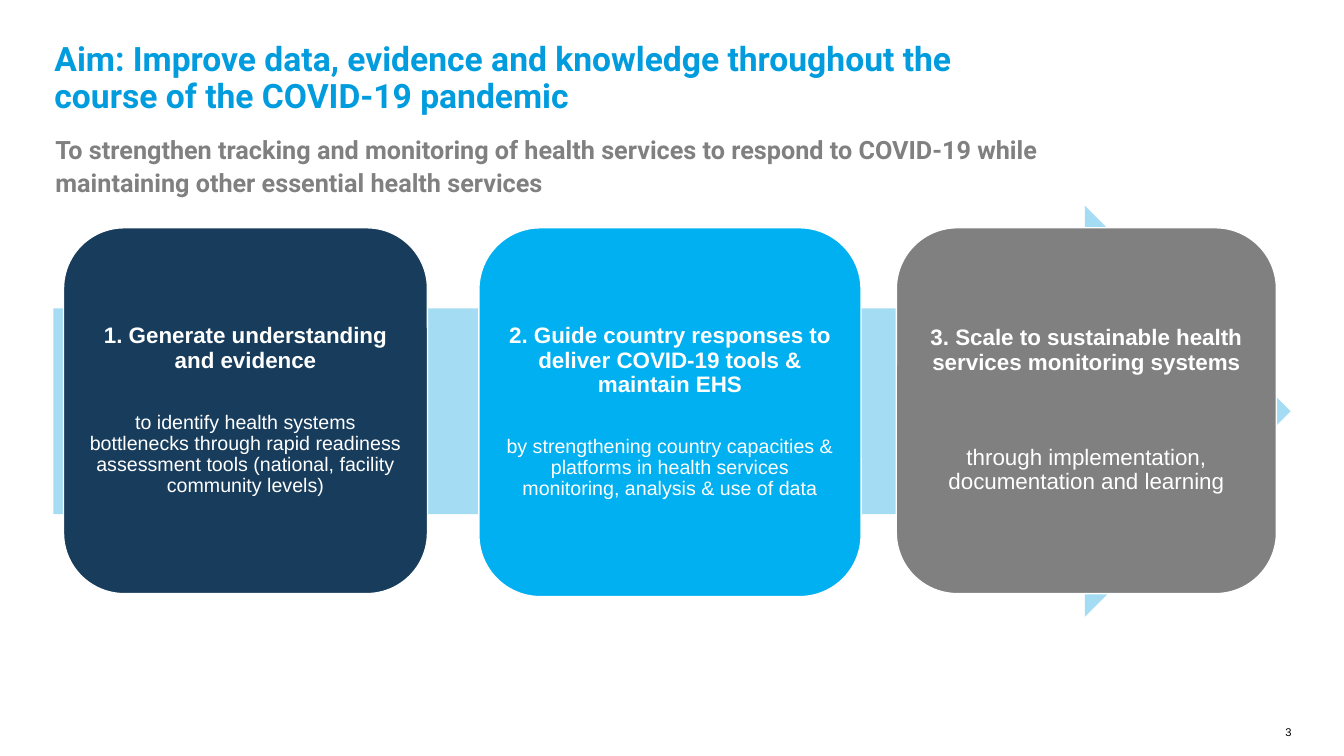
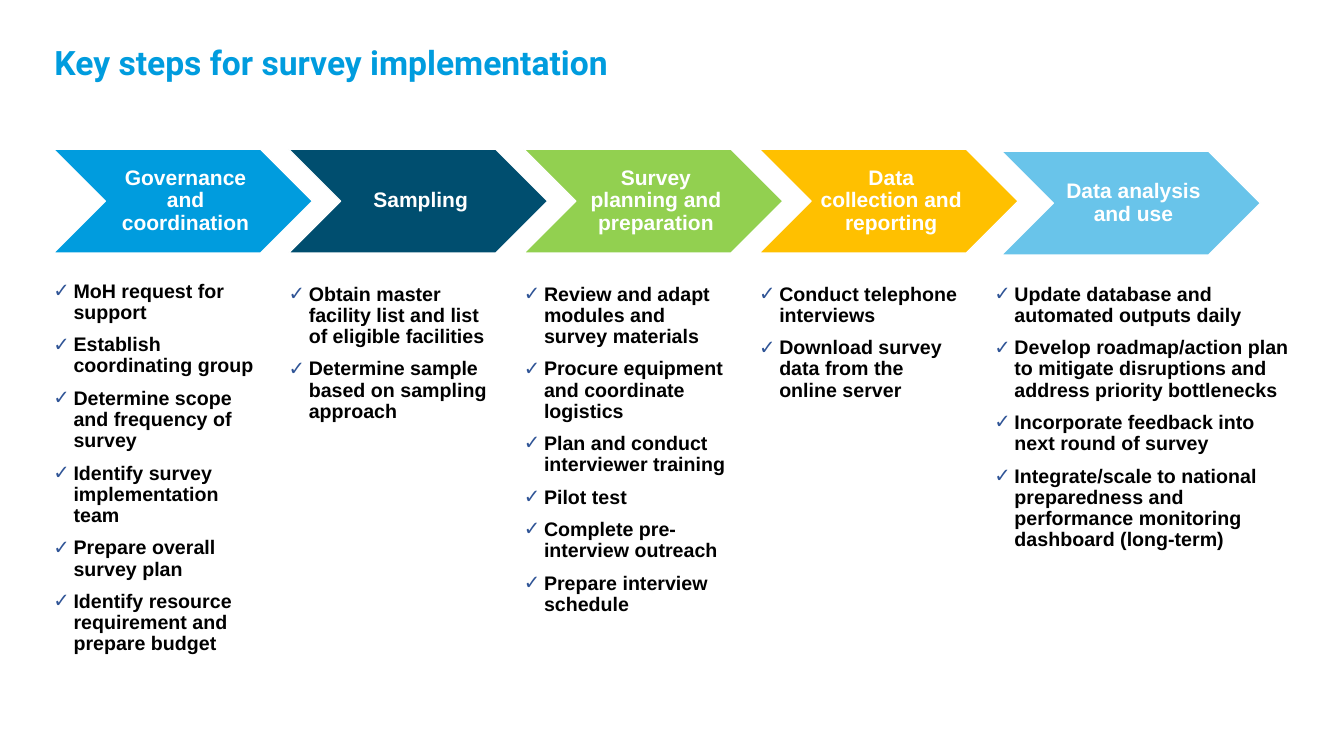
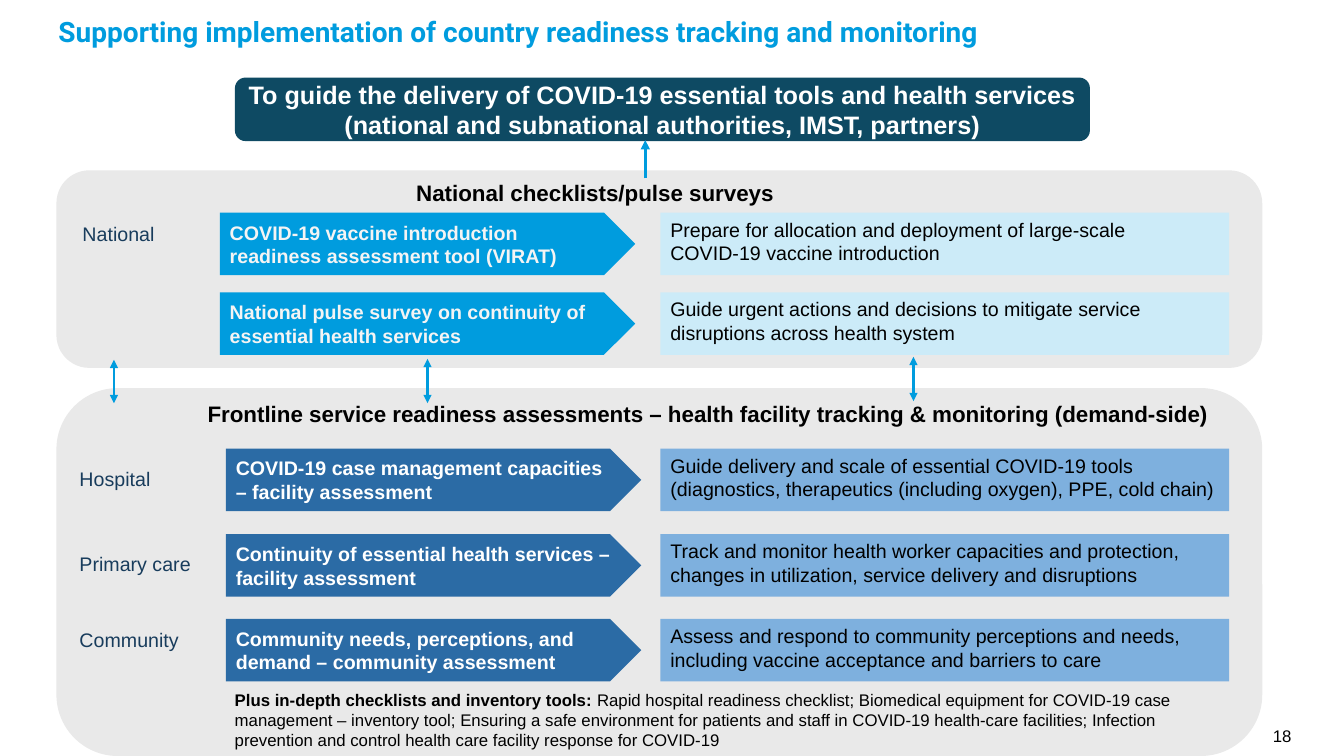
from lxml import etree
from pptx import Presentation
from pptx.dml.color import RGBColor
from pptx.enum.shapes import MSO_CONNECTOR, MSO_SHAPE
from pptx.enum.text import MSO_ANCHOR, MSO_AUTO_SIZE, PP_ALIGN
from pptx.oxml.ns import qn
from pptx.util import Inches, Pt

BLUE, NAVY, WHITE, BLACK, GREY = "009CDE", "183C5C", "FFFFFF", "000000", "808080"
PANEL_GREY = "E9E9E9"
HEADING_FONT, BODY_FONT = "Roboto", "Arial"
DEFAULT_INSETS = (0.1, 0.05, 0.1, 0.05)
TITLE_INSETS = (0.02, 0, 0.39, 0)
NO_INSETS = (0, 0, 0, 0)

# Slide 1: heading, body, body size, gap between them, fill, left, width, height
AIM_TITLE = "Aim: Improve data, evidence and knowledge throughout the course of the COVID-19 pandemic"
AIM_SUBTITLE = ("To strengthen tracking and monitoring of health services to respond to COVID-19 "
                "while maintaining other essential health services")
AIM_CARDS = [
    ("1. Generate understanding and evidence",
     "to identify health systems bottlenecks through rapid readiness assessment tools "
     "(national, facility community levels)", 14, 28, NAVY, 0.63, 3.61, 3.63),
    ("2. Guide country responses to deliver COVID-19 tools & maintain EHS",
     "by strengthening country capacities & platforms in health services monitoring, "
     "analysis & use of data", 14, 28, "00B0F0", 4.75, 3.79, 3.66),
    ("3. Scale to sustainable health services monitoring systems",
     "through implementation, documentation and learning", 16, 51, GREY, 8.89, 3.77, 3.63),
]

# Slide 2: step, fill, tasks
STEPS_TITLE = "Key steps for survey implementation"
STEPS = [
    ("Governance and coordination", BLUE, [
        "MoH request for support", "Establish coordinating group",
        "Determine scope and frequency of survey", "Identify survey implementation team",
        "Prepare overall survey plan", "Identify resource requirement and prepare budget"]),
    ("Sampling", "004E6F", [
        "Obtain master facility list and list of eligible facilities",
        "Determine sample based on sampling approach"]),
    ("Survey planning and preparation", "92D050", [
        "Review and adapt modules and survey materials",
        "Procure equipment and coordinate logistics", "Plan and conduct interviewer training",
        "Pilot test", "Complete pre-interview outreach", "Prepare interview schedule"]),
    ("Data collection and reporting", "FFC000", [
        "Conduct telephone interviews", "Download survey data from the online server"]),
    ("Data analysis and use", "69C4EA", [
        "Update database and automated outputs daily",
        "Develop roadmap/action plan to mitigate disruptions and address priority bottlenecks",
        "Incorporate feedback into next round of survey",
        "Integrate/scale to national preparedness and performance monitoring dashboard (long-term)"]),
]

# Slide 3: panels with rows of (top, tool, purpose); labels; arrows
SUPPORT_TITLE = "Supporting implementation of country readiness tracking and monitoring"
SUPPORT_GOAL = ("To guide the delivery of COVID-19 essential tools and health services\v"
                "(national and subnational authorities, IMST, partners)")
PANELS = [
    {"box": (0.56, 1.69, 11.96, 1.96), "heading": "National checklists/pulse surveys",
     "heading_box": (4.03, 1.73, 8.2, 0.4), "tool_left": 2.18,
     "tool_fill": BLUE, "tool_text": "F4F4F4", "purpose_fill": "CCEBF8",
     "rows": [
         (2.11, "COVID-19 vaccine introduction readiness assessment tool (VIRAT)",
          "Prepare for allocation and deployment of large-scale COVID-19 vaccine introduction"),
         (2.9, "National pulse survey on continuity of essential health services",
          "Guide urgent actions and decisions to mitigate service disruptions across health system")]},
    {"box": (0.56, 3.85, 11.96, 3.65),
     "heading": "Frontline service readiness assessments – health facility tracking & monitoring (demand-side)",
     "heading_box": (1.96, 3.92, 10.31, 0.4), "tool_left": 2.24,
     "tool_fill": "2B6BA5", "tool_text": WHITE, "purpose_fill": "7EB0DE",
     "rows": [
         (4.45, "COVID-19 case management capacities – facility assessment",
          "Guide delivery and scale of essential COVID-19 tools "
          "(diagnostics, therapeutics (including oxygen), PPE, cold chain)"),
         (5.3, "Continuity of essential health services – facility assessment",
          "Track and monitor health worker capacities and protection, "
          "changes in utilization, service delivery and disruptions"),
         (6.14, "Community needs, perceptions, and demand – community assessment",
          "Assess and respond to community perceptions and needs, "
          "including vaccine acceptance and barriers to care")]},
]
LEVELS = [("National", 0.72, 2.15), ("Hospital", 0.69, 4.58),
          ("Primary care", 0.69, 5.43), ("Community", 0.69, 6.18)]
EXTRA_TOOLS = [
    ("Plus in-depth checklists and inventory tools: ", {"bold": True}),
    ("Rapid hospital readiness checklist; Biomedical equipment for COVID-19 case management – "
     "inventory tool; Ensuring a safe environment for patients and staff in COVID-19 health-care "
     "facilities; Infection prevention and control health care facility response for COVID-19", {}),
]
# x, from y, to y, width, arrow ends
ARROWS = [(1.13, 3.57, 4, 1.5, ("headEnd", "tailEnd")),
          (4.24, 3.56, 4, 1.5, ("headEnd", "tailEnd")),
          (9.06, 3.54, 3.98, 1.5, ("headEnd", "tailEnd")),
          (6.4, 1.77, 1.39, 2.25, ("tailEnd",))]


def color(value):
    return RGBColor.from_string(value)


def set_attributes(target, values):
    for name, value in values.items():
        setattr(target, name, value)


def font_format(size, text_color, bold=False, name=BODY_FONT):
    return {"size": Pt(size), "bold": bold, "name": name, "color": text_color}


def format_font(font, values):
    values = dict(values)
    font.color.rgb = color(values.pop("color"))
    set_attributes(font, values)


def add_bullet(paragraph, mark, mark_color, indent):
    properties = paragraph._p.get_or_add_pPr()
    properties.set("marL", str(Inches(indent)))
    properties.set("indent", str(-Inches(indent)))
    bullet_color = etree.SubElement(properties, qn("a:buClr"))
    etree.SubElement(bullet_color, qn("a:srgbClr")).set("val", mark_color)
    etree.SubElement(properties, qn("a:buFont")).set("typeface", BODY_FONT)
    etree.SubElement(properties, qn("a:buChar")).set("char", mark)


def write(shape, paragraphs, anchor=MSO_ANCHOR.TOP, insets=DEFAULT_INSETS, bullet=None):
    """Fill a shape with (text or runs, font values, paragraph values) tuples."""
    frame = shape.text_frame
    margins = ("margin_left", "margin_top", "margin_right", "margin_bottom")
    set_attributes(frame, {"word_wrap": True, "auto_size": MSO_AUTO_SIZE.NONE,
                           "vertical_anchor": anchor})
    set_attributes(frame, dict(zip(margins, map(Inches, insets))))
    for index, (content, font, layout) in enumerate(paragraphs):
        paragraph = frame.add_paragraph() if index else frame.paragraphs[0]
        if bullet:
            add_bullet(paragraph, *bullet)
        set_attributes(paragraph, {"alignment": PP_ALIGN.LEFT, **layout})
        if isinstance(content, str):
            paragraph.text = content
            for run in paragraph.runs:
                format_font(run.font, font)
        else:
            for text, changes in content:
                run = paragraph.add_run()
                run.text = text
                format_font(run.font, {**font, **changes})


def place(shape, box):
    set_attributes(shape, dict(zip(("left", "top", "width", "height"), map(Inches, box))))


def add_text(slide, box, paragraphs, **frame):
    write(slide.shapes.add_textbox(*map(Inches, box)), paragraphs, **frame)


def add_block(slide, kind, box, fill, outline=None):
    shape = slide.shapes.add_shape(kind, *map(Inches, box))
    shape.shadow.inherit = False
    shape.fill.solid()
    shape.fill.fore_color.rgb = color(fill)
    if outline:
        shape.line.color.rgb = color(outline)
        shape.line.width = Pt(1)
    else:
        shape.line.fill.background()
    return shape


def add_arrow(slide, x, start, end, width, ends):
    connector = slide.shapes.add_connector(
        MSO_CONNECTOR.STRAIGHT, Inches(x), Inches(start), Inches(x), Inches(end))
    connector.line.color.rgb = color(BLUE)
    connector.line.width = Pt(width)
    line = connector.line._get_or_add_ln()
    for name in ends:
        etree.SubElement(line, qn(f"a:{name}")).set("type", "triangle")
    etree.SubElement(connector._element.spPr, qn("a:effectLst"))


def add_titled_slide(presentation, title, box, size=24, anchor=MSO_ANCHOR.MIDDLE):
    slide = presentation.slides.add_slide(presentation.slide_layouts[5])
    place(slide.shapes.title, box)
    write(slide.shapes.title, [(title, font_format(size, BLUE, True, HEADING_FONT),
                                {"line_spacing": 0.9, "space_before": Pt(0)})],
          anchor=anchor, insets=TITLE_INSETS)
    return slide


def add_page_number(slide, number, size):
    add_text(slide, (12.49, 7.2, 0.32, 0.2),
             [(number, font_format(size, BLACK), {"alignment": PP_ALIGN.RIGHT})],
             insets=NO_INSETS)


def build_aim(presentation):
    slide = add_titled_slide(presentation, AIM_TITLE, (0.52, 0.39, 10.21, 0.79))
    add_text(slide, (0.53, 1.3, 10.03, 0.66),
             [(AIM_SUBTITLE, font_format(18, GREY, True, HEADING_FONT), {"line_spacing": 1.1})],
             insets=(0.02, 0, 0.02, 0))
    add_block(slide, MSO_SHAPE.RIGHT_ARROW, (0.53, 2.04, 12.27, 4.08), "A3DCF3")
    centred = {"alignment": PP_ALIGN.CENTER, "line_spacing": 0.9}
    for heading, body, size, gap, fill, left, width, height in AIM_CARDS:
        card = add_block(slide, MSO_SHAPE.ROUNDED_RECTANGLE, (left, 2.26, width, height), fill, WHITE)
        write(card, [(heading, font_format(16, WHITE, True), {**centred, "space_after": Pt(gap)}),
                     (body, font_format(size, WHITE), centred)],
              anchor=MSO_ANCHOR.MIDDLE, insets=(0.07,) * 4)
    add_page_number(slide, "3", 8)


def build_steps(presentation):
    slide = add_titled_slide(presentation, STEPS_TITLE, (0.52, 0.39, 8.92, 0.43),
                             anchor=MSO_ANCHOR.BOTTOM)
    left, pitch = 0.53, 2.333
    for index, (step, fill, tasks) in enumerate(STEPS):
        column = left + index * pitch
        first, last = index == 0, index == len(STEPS) - 1
        chevron_box = (column + 0.07, 1.5, 2.57, 1.03) if last else (column, 1.48, 2.57, 1.03)
        chevron = add_block(slide, MSO_SHAPE.CHEVRON, chevron_box, fill, WHITE)
        write(chevron, [(step, font_format(15, WHITE, True),
                         {"alignment": PP_ALIGN.CENTER, "line_spacing": 0.9})],
              anchor=MSO_ANCHOR.MIDDLE, insets=(0.07, 0.02, 0.02, 0.02))
        add_text(slide, (column, 2.79 if first else 2.82, 2.95 if last else 2.06, 3.6),
                 [(task, font_format(14, BLACK, True), {"line_spacing": 0.9, "space_after": Pt(8)})
                  for task in tasks],
                 insets=NO_INSETS, bullet=("✓", "2F5496", 0.2))


def build_support(presentation):
    slide = add_titled_slide(presentation, SUPPORT_TITLE, (0.56, 0.14, 10.38, 0.39), size=20)
    for panel in PANELS:
        add_block(slide, MSO_SHAPE.ROUNDED_RECTANGLE, panel["box"], PANEL_GREY)
        add_text(slide, panel["heading_box"], [(panel["heading"], font_format(16, BLACK, True), {})])
        for top, tool, purpose in panel["rows"]:
            tool_shape = add_block(slide, MSO_SHAPE.PENTAGON, (panel["tool_left"], top, 4.12, 0.62),
                                   panel["tool_fill"])
            write(tool_shape, [(tool, font_format(14, panel["tool_text"], True), {})],
                  anchor=MSO_ANCHOR.MIDDLE)
            purpose_shape = add_block(slide, MSO_SHAPE.RECTANGLE, (6.55, top, 5.64, 0.62),
                                      panel["purpose_fill"])
            write(purpose_shape, [(purpose, font_format(14, BLACK), {})])
    for level, left, top in LEVELS:
        add_text(slide, (left, top, 1.64, 0.36), [(level, font_format(14, NAVY), {})])
    goal = add_block(slide, MSO_SHAPE.ROUNDED_RECTANGLE, (2.33, 0.77, 8.48, 0.63), "0E4A63")
    write(goal, [(SUPPORT_GOAL, font_format(18, WHITE, True), {"alignment": PP_ALIGN.CENTER})],
          anchor=MSO_ANCHOR.MIDDLE)
    for arrow in ARROWS:
        add_arrow(slide, *arrow)
    add_text(slide, (2.23, 6.79, 10, 0.71), [(EXTRA_TOOLS, font_format(12, BLACK), {})])
    add_page_number(slide, "18", 12)


def main():
    presentation = Presentation()
    presentation.slide_width, presentation.slide_height = Inches(13.33), Inches(7.5)
    for build in (build_aim, build_steps, build_support):
        build(presentation)
    presentation.save("out.pptx")


if __name__ == "__main__":
    main()
